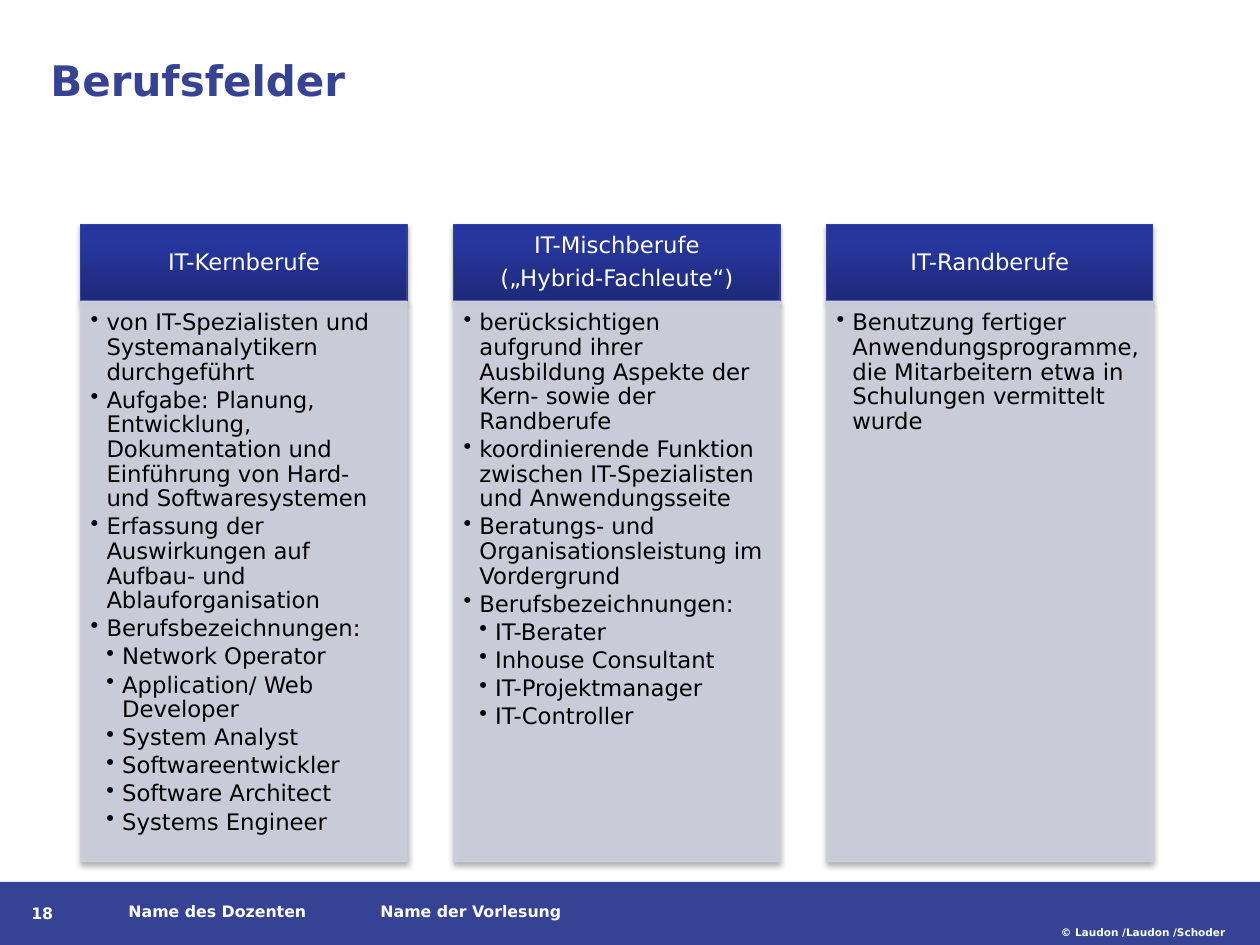
from copy import deepcopy

from pptx import Presentation
from pptx.dml.color import RGBColor
from pptx.enum.shapes import MSO_SHAPE
from pptx.enum.text import MSO_ANCHOR, MSO_AUTO_SIZE, PP_ALIGN
from pptx.oxml import parse_xml
from pptx.oxml.ns import nsdecls
from pptx.util import Inches, Pt

RECT = MSO_SHAPE.RECTANGLE
TOP, MIDDLE = MSO_ANCHOR.TOP, MSO_ANCHOR.MIDDLE
LEFT, CENTER = PP_ALIGN.LEFT, PP_ALIGN.CENTER
NO_FIT = MSO_AUTO_SIZE.NONE

FONT = "DejaVu Sans"
COLORS = {
    "brand": "364395", "white": "FFFFFF", "black": "000000", "panel": "CECFDD",
    "dark": "1E2A7A", "mid": "27379E", "light": "2435A1",
}
STOPS = [(0, "dark"), (0.8, "mid"), (1, "light")]

COL_LEFT, COL_STEP, COL_WIDTH = 0.64, 2.96, 2.59
HEAD_TOP, HEAD_HIGH, BODY_HIGH = 1.78, 0.61, 4.45
INDENT = 0.125

# Each column: heading lines, then (level, text) entries
COLUMNS = [
    (["IT-Kernberufe"], [
        (1, "von IT-Spezialisten und Systemanalytikern durchgeführt"),
        (1, "Aufgabe: Planung, Entwicklung, Dokumentation und Einführung "
            "von Hard- und Softwaresystemen"),
        (1, "Erfassung der Auswirkungen auf Aufbau- und Ablauforganisation"),
        (1, "Berufsbezeichnungen:"),
        (2, "Network Operator"),
        (2, "Application/ Web Developer"),
        (2, "System Analyst"),
        (2, "Softwareentwickler"),
        (2, "Software Architect"),
        (2, "Systems Engineer"),
    ]),
    (["IT-Mischberufe", "(„Hybrid-Fachleute“)"], [
        (1, "berücksichtigen aufgrund ihrer Ausbildung Aspekte der Kern- "
            "sowie der Randberufe"),
        (1, "koordinierende Funktion zwischen IT-Spezialisten und "
            "Anwendungsseite"),
        (1, "Beratungs- und Organisationsleistung im Vordergrund"),
        (1, "Berufsbezeichnungen:"),
        (2, "IT-Berater"),
        (2, "Inhouse Consultant"),
        (2, "IT-Projektmanager"),
        (2, "IT-Controller"),
    ]),
    (["IT-Randberufe"], [
        (1, "Benutzung fertiger Anwendungsprogramme, die Mitarbeitern etwa "
            "in Schulungen vermittelt wurde"),
    ]),
]


def rgb(name):
    return RGBColor.from_string(COLORS[name])


def apply(obj, values):
    for key, value in values.items():
        setattr(obj, key, value)


def set_frame(frame, insets, anchor=TOP):
    names = ("margin_left", "margin_top", "margin_right", "margin_bottom")
    apply(frame, dict(zip(names, map(Inches, insets))))
    apply(frame, {"word_wrap": True, "auto_size": NO_FIT,
                  "vertical_anchor": anchor})


def set_font(para, size, color, bold=False):
    apply(para.font, {"name": FONT, "size": Pt(size), "bold": bold})
    para.font.color.rgb = rgb(color)


def add_bullet(para, level):
    props = para._p.get_or_add_pPr()
    props.set("marL", str(Inches(INDENT * level)))
    props.set("indent", str(Inches(-INDENT)))
    props.append(parse_xml(f'<a:buChar {nsdecls("a")} char="•"/>'))


def add_lines(frame, lines, color, align, after):
    """Write (level, text) lines; level 0 has no bullet."""
    for pos, (level, text) in enumerate(lines):
        para = frame.add_paragraph() if pos else frame.paragraphs[0]
        para.text = text
        if level:
            add_bullet(para, level)
        apply(para, {"alignment": align, "line_spacing": 0.9,
                     "space_before": Pt(0), "space_after": Pt(after)})
        set_font(para, 13, color)


def add_rect(slide, box, line):
    shape = slide.shapes.add_shape(RECT, *map(Inches, box))
    shape.shadow.inherit = False
    shape.line.color.rgb = rgb(line)
    shape.line.width = Pt(0.75)
    return shape


def add_shadow(shape):
    effects = shape._element.spPr.find(".//{*}effectLst")
    effects.append(parse_xml(
        f'<a:outerShdw {nsdecls("a")} blurRad="{Pt(3.1)}" dist="{Pt(1.8)}" '
        f'dir="5400000" rotWithShape="0"><a:srgbClr val="{COLORS["black"]}">'
        '<a:alpha val="35000"/></a:srgbClr></a:outerShdw>'))


def fill_gradient(shape):
    fill = shape.fill
    fill.gradient()
    fill.gradient_angle = 90
    stops = shape._element.spPr.find(".//{*}gsLst")
    stops.append(deepcopy(stops[-1]))
    for stop, (place, color) in zip(fill.gradient_stops, STOPS):
        stop.position = place
        stop.color.rgb = rgb(color)


def fade(shape, percent):
    """Make fill and line partly opaque."""
    for color in shape._element.spPr.xpath(
            "./a:solidFill/a:srgbClr | ./a:ln/a:solidFill/a:srgbClr"):
        color.append(parse_xml(
            f'<a:alpha {nsdecls("a")} val="{percent * 1000}"/>'))


def add_column(slide, left, heads, items):
    head = add_rect(slide, (left, HEAD_TOP, COL_WIDTH, HEAD_HIGH), "brand")
    fill_gradient(head)
    add_shadow(head)
    set_frame(head.text_frame, (0.1, 0.06, 0.1, 0.06), MIDDLE)
    add_lines(head.text_frame, [(0, text) for text in heads],
              "white", CENTER, 4.5)

    body = add_rect(
        slide, (left, HEAD_TOP + HEAD_HIGH, COL_WIDTH, BODY_HIGH), "panel")
    body.fill.solid()
    body.fill.fore_color.rgb = rgb("panel")
    fade(body, 90)
    add_shadow(body)
    set_frame(body.text_frame, (0.08, 0.08, 0.1, 0.11))
    add_lines(body.text_frame, items, "black", LEFT, 2)


def add_label(slide, box, text, size, insets=(0, 0, 0, 0)):
    frame = slide.shapes.add_textbox(*map(Inches, box)).text_frame
    set_frame(frame, insets)
    frame.text = text
    set_font(frame.paragraphs[0], size, "white", True)


def add_footer(slide):
    bar = add_rect(slide, (0, 7, 10, 0.5), "brand")
    bar.fill.solid()
    bar.fill.fore_color.rgb = rgb("brand")
    bar.line.fill.background()
    add_label(slide, (8.42, 7.35, 1.5, 0.15), "© Laudon /Laudon /Schoder", 6)
    add_label(slide, (1.02, 7.16, 6.66, 0.18),
              "Name des Dozenten\t\tName der Vorlesung", 9)
    add_label(slide, (0.15, 7.12, 0.75, 0.19), "18", 9,
              (0.1, 0.05, 0.1, 0.05))


def add_title(slide, text):
    title = slide.shapes.title
    apply(title, {"left": Inches(0.4), "top": Inches(0.43),
                  "width": Inches(9), "height": Inches(0.98)})
    set_frame(title.text_frame, (0, 0, 0.1, 0.05))
    title.text_frame.text = text
    para = title.text_frame.paragraphs[0]
    para.alignment = LEFT
    set_font(para, 24, "brand", True)


def main():
    deck = Presentation()
    apply(deck, {"slide_width": Inches(10), "slide_height": Inches(7.5)})
    slide = deck.slides.add_slide(deck.slide_layouts[5])
    add_footer(slide)
    add_title(slide, "Berufsfelder")
    for pos, (heads, items) in enumerate(COLUMNS):
        add_column(slide, COL_LEFT + pos * COL_STEP, heads, items)
    deck.save("out.pptx")


if __name__ == "__main__":
    main()
